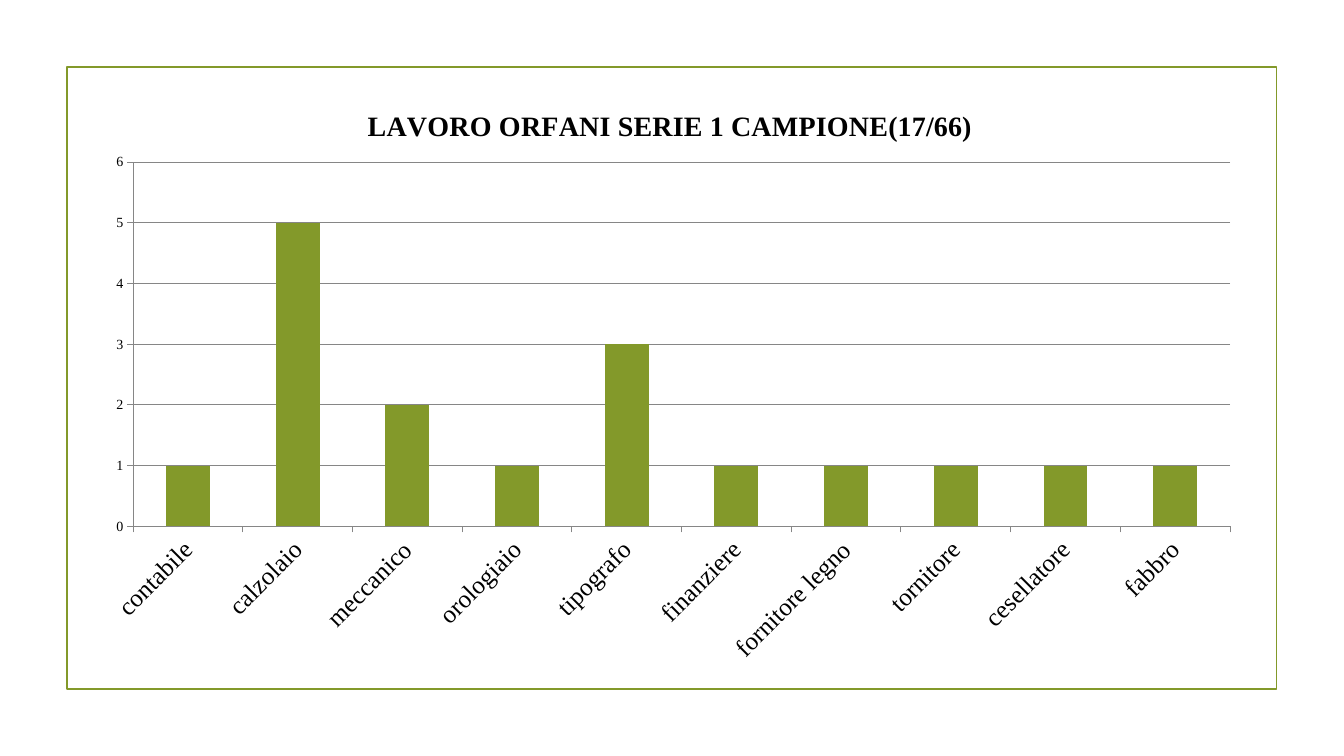
from lxml import etree
from pptx import Presentation
from pptx.chart.data import CategoryChartData
from pptx.dml.color import RGBColor
from pptx.enum.chart import XL_CHART_TYPE, XL_TICK_MARK
from pptx.enum.shapes import MSO_SHAPE
from pptx.oxml.ns import qn
from pptx.util import Cm, Pt

COLUMNS = XL_CHART_TYPE.COLUMN_STACKED
RECTANGLE = MSO_SHAPE.RECTANGLE
OUTSIDE = XL_TICK_MARK.OUTSIDE
NO_TICK = XL_TICK_MARK.NONE

FONT, GREEN, BLACK, GREY = "Times New Roman", "83992A", "000000", "868686"
TITLE = "LAVORO ORFANI SERIE 1 CAMPIONE(17/66)"
JOBS = {
    "contabile": 1, "calzolaio": 5, "meccanico": 2, "orologiaio": 1,
    "tipografo": 3, "finanziere": 1, "fornitore legno": 1,
    "tornitore": 1, "cesellatore": 1, "fabbro": 1,
}
PLOT_BOX = {"x": 0.04, "y": 0.13, "w": 0.94, "h": 0.62}


def colour(value):
    return RGBColor.from_string(value)


def format_font(font, size, bold=False):
    for name, value in {"name": FONT, "size": Pt(size), "bold": bold}.items():
        setattr(font, name, value)
    font.color.rgb = colour(BLACK)


def format_line(line, value, width):
    line.color.rgb = colour(value)
    line.width = Pt(width)


def add_frame(page, left, top, width, height):
    frame = page.shapes.add_shape(RECTANGLE, left, top, width, height)
    frame.shadow.inherit = False
    frame.fill.background()
    format_line(frame.line, GREEN, 1.25)


def place_plot(chart):
    """Fix the inner plot area as fractions of the chart."""
    area = chart._chartSpace.chart.plotArea
    for old in area.findall(qn("c:layout")):
        area.remove(old)
    layout = etree.Element(qn("c:layout"))
    area.insert(0, layout)
    manual = etree.SubElement(layout, qn("c:manualLayout"))
    settings = {"layoutTarget": "inner", "xMode": "edge", "yMode": "edge", **PLOT_BOX}
    for tag, value in settings.items():
        etree.SubElement(manual, qn("c:" + tag)).set("val", str(value))


def add_jobs_chart(page, left, top, width, height):
    data = CategoryChartData()
    data.categories = list(JOBS)
    data.add_series("Series 1", list(JOBS.values()))
    chart = page.shapes.add_chart(COLUMNS, left, top, width, height, data).chart
    format_font(chart.font, 10)
    chart.has_legend = False

    # Title
    chart.has_title = True
    title = chart.chart_title
    title.include_in_layout = False
    span = title.text_frame.paragraphs[0].add_run()
    span.text = TITLE
    format_font(span.font, 20, bold=True)

    # Columns
    plot = chart.plots[0]
    plot.gap_width, plot.overlap, plot.vary_by_categories = 150, 100, False
    fill = plot.series[0].format.fill
    fill.solid()
    fill.fore_color.rgb = colour(GREEN)

    # Axes
    values, jobs = chart.value_axis, chart.category_axis
    for axis, size in ((values, 10), (jobs, 18)):
        axis.major_tick_mark = OUTSIDE
        axis.minor_tick_mark = NO_TICK
        format_font(axis.tick_labels.font, size)
        format_line(axis.format.line, GREY, 0.75)
    for name, value in {"minimum_scale": 0, "maximum_scale": 6, "major_unit": 1,
                        "has_major_gridlines": True}.items():
        setattr(values, name, value)
    format_line(values.major_gridlines.format.line, GREY, 0.75)

    # Job names slant upwards at 45 degrees
    jobs._element.find(qn("c:txPr")).find(qn("a:bodyPr")).set("rot", "-2700000")
    place_plot(chart)


def main():
    deck = Presentation()
    deck.slide_width, deck.slide_height = Cm(33.87), Cm(19.05)
    page = deck.slides.add_slide(deck.slide_layouts[6])
    add_frame(page, Cm(1.69), Cm(1.69), Cm(30.48), Cm(15.67))
    add_jobs_chart(page, Cm(2.18), Cm(2.16), Cm(29.41), Cm(14.81))
    deck.save("out.pptx")


if __name__ == "__main__":
    main()
